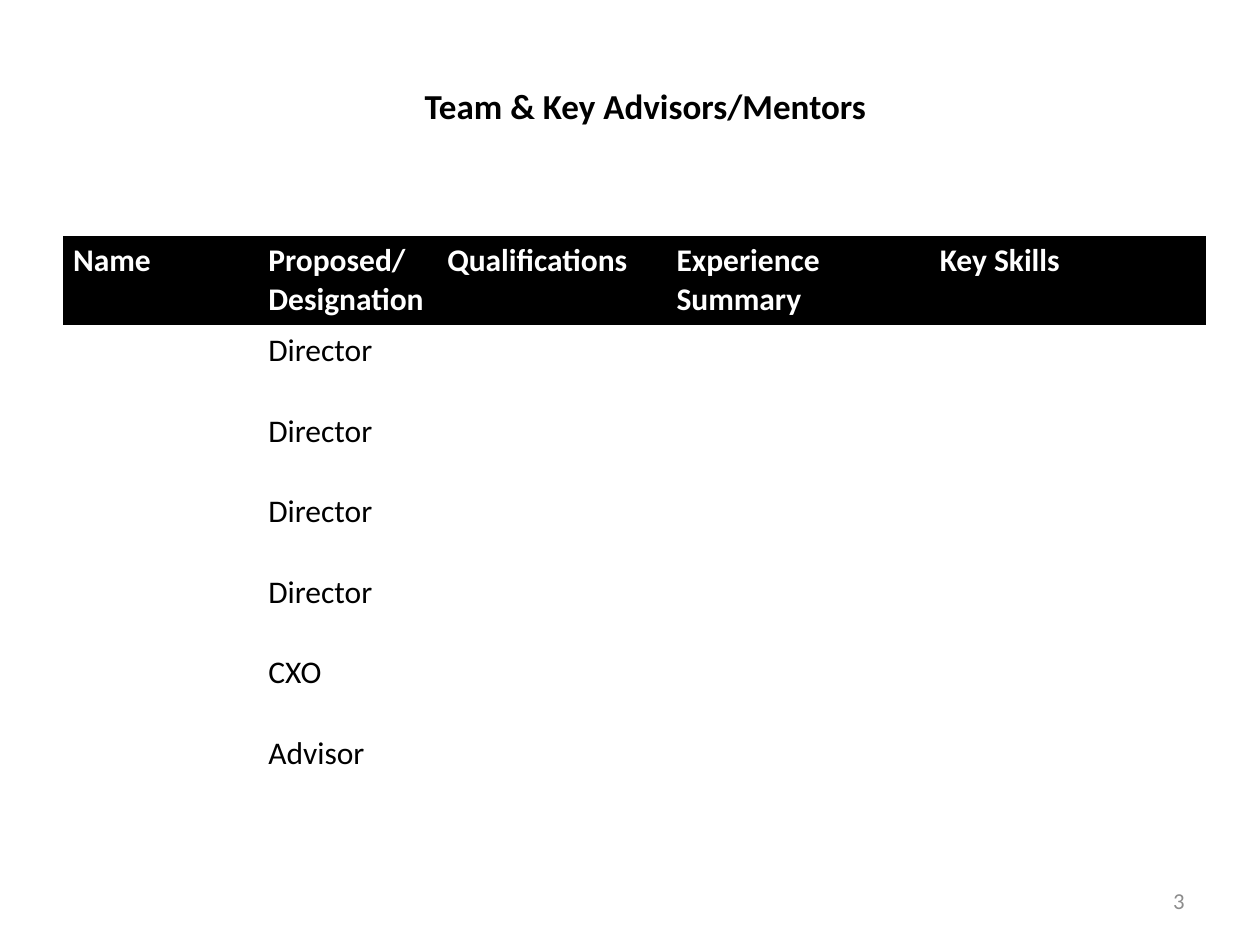
import dataclasses

import pptx
import pptx.dml.color
import pptx.enum.text
import pptx.oxml.ns
import pptx.util

Inches = pptx.util.Inches
Align = pptx.enum.text.PP_ALIGN
Anchor = pptx.enum.text.MSO_ANCHOR

NO_STYLE_NO_GRID = "{2D5ABB26-0587-4C30-8999-92F81FD0307C}"
HEADERS = ["Name", "Proposed/ Designation", "Qualifications",
           "Experience Summary", "Key Skills"]
DESIGNATIONS = ["Director"] * 4 + ["CXO", "Advisor"]
COLUMN_WIDTHS = [1.55, 1.42, 1.82, 2.09, 2.19]
ROW_HEIGHT = 0.64


@dataclasses.dataclass(frozen=True)
class Theme:
    font: str = "Calibri"
    dark: str = "000000"
    light: str = "FFFFFF"
    muted: str = "8C8C8C"
    title_size: int = 20
    table_size: int = 18
    number_size: int = 13


class SlideBuilder:
    def __init__(self, slide, theme):
        self.slide = slide
        self.theme = theme

    def set_text(self, text_frame, text, size, color, bold=False, align=Align.LEFT):
        text_frame.text = text
        text_frame.word_wrap = True
        for paragraph in text_frame.paragraphs:
            paragraph.alignment = align
            for run in paragraph.runs:
                run.font.name = self.theme.font
                run.font.size = pptx.util.Pt(size)
                run.font.bold = bold
                run.font.color.rgb = pptx.dml.color.RGBColor.from_string(color)

    def title(self, text, left, top, width, height):
        shape = self.slide.shapes.title
        shape.left, shape.top = Inches(left), Inches(top)
        shape.width, shape.height = Inches(width), Inches(height)
        shape.text_frame.vertical_anchor = Anchor.MIDDLE
        self.set_text(shape.text_frame, text, self.theme.title_size,
                      self.theme.dark, bold=True)

    def table(self, rows, left, top, column_widths, row_height):
        """Draw a borderless table whose first row is a dark header."""
        frame = self.slide.shapes.add_table(
            len(rows), len(column_widths), Inches(left), Inches(top),
            Inches(sum(column_widths)), Inches(row_height * len(rows)))
        table = frame.table
        table.horz_banding = False
        style = frame._element.find(".//" + pptx.oxml.ns.qn("a:tableStyleId"))
        style.text = NO_STYLE_NO_GRID
        for column, width in zip(table.columns, column_widths):
            column.width = Inches(width)
        for row_index, (row, texts) in enumerate(zip(table.rows, rows)):
            row.height = Inches(row_height)
            for cell, text in zip(row.cells, texts):
                self.cell(cell, text, is_header=row_index == 0)

    def cell(self, cell, text, is_header):
        cell.margin_left = cell.margin_right = Inches(0.08)
        cell.margin_top = cell.margin_bottom = Inches(0.05)
        color = self.theme.light if is_header else self.theme.dark
        if is_header:
            cell.fill.solid()
            cell.fill.fore_color.rgb = pptx.dml.color.RGBColor.from_string(self.theme.dark)
        else:
            cell.fill.background()
        if text:
            self.set_text(cell.text_frame, text, self.theme.table_size, color,
                          bold=is_header)

    def slide_number(self, number, left, top, width, height):
        shape = self.slide.shapes.add_textbox(
            Inches(left), Inches(top), Inches(width), Inches(height))
        shape.text_frame.vertical_anchor = Anchor.MIDDLE
        self.set_text(shape.text_frame, str(number), self.theme.number_size,
                      self.theme.muted, align=Align.RIGHT)


def main():
    presentation = pptx.Presentation()
    presentation.slide_width = Inches(10)
    presentation.slide_height = Inches(7.5)
    title_only = presentation.slide_layouts.get_by_name("Title Only")
    builder = SlideBuilder(presentation.slides.add_slide(title_only), Theme())

    builder.title("Team & Key Advisors/Mentors", 3.27, 0.62, 4.02, 0.44)
    team = [["", designation, "", "", ""] for designation in DESIGNATIONS]
    builder.table([HEADERS] + team, 0.5, 1.87, COLUMN_WIDTHS, ROW_HEIGHT)
    builder.slide_number(3, 7.17, 6.95, 2.33, 0.4)

    presentation.save("out.pptx")


if __name__ == "__main__":
    main()
